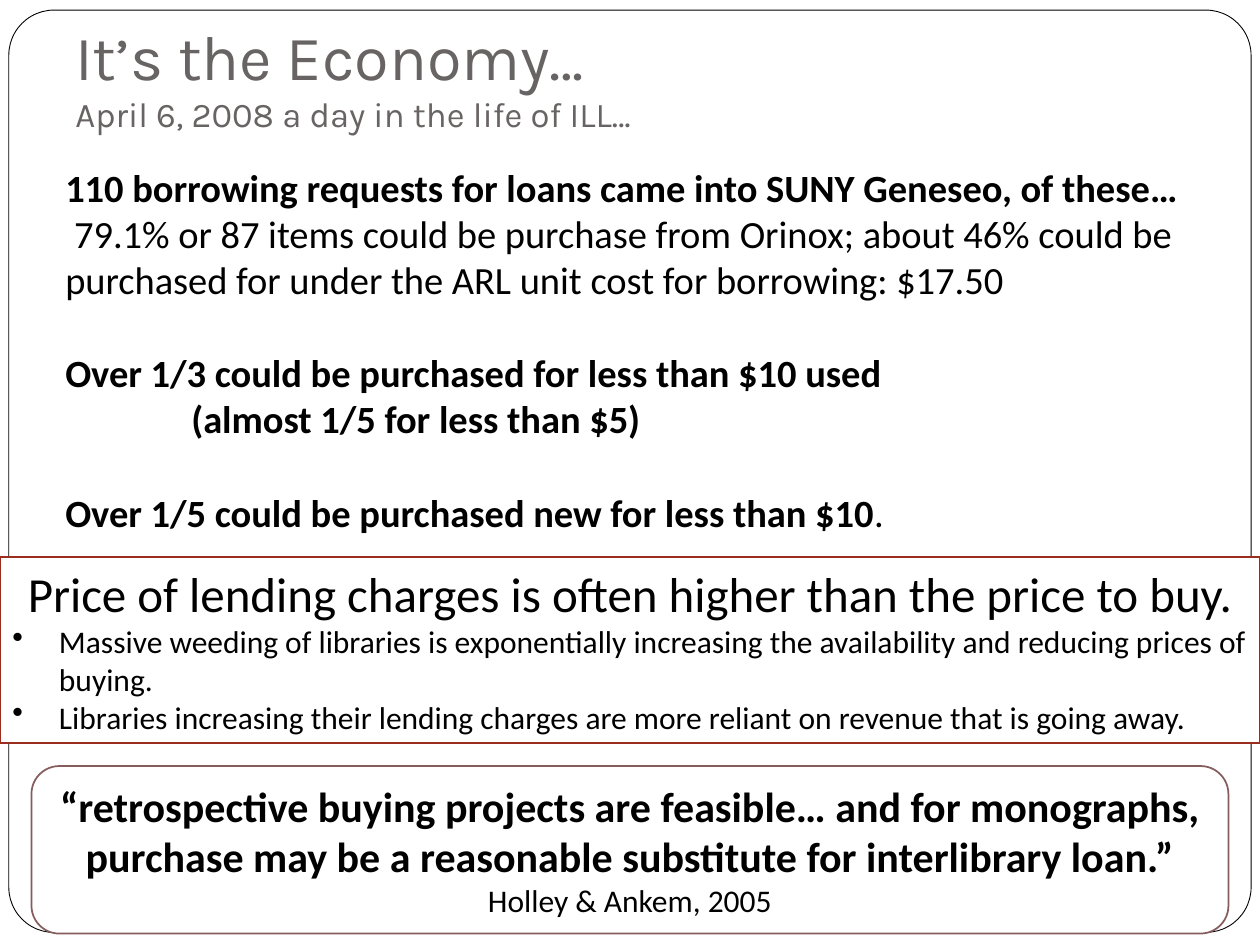
from dataclasses import dataclass, field
from typing import Optional

from lxml import etree
from pptx import Presentation
from pptx.dml.color import RGBColor
from pptx.enum import shapes, text
from pptx.oxml import ns
from pptx.util import Inches, Pt

BLACK = RGBColor(0x00, 0x00, 0x00)
WHITE = RGBColor(0xFF, 0xFF, 0xFF)
GRAY = RGBColor(0x69, 0x64, 0x64)
RUST = RGBColor(0x9B, 0x2D, 0x1F)
MAUVE = RGBColor(0x85, 0x5D, 0x5D)

BODY_SIZE = 22
BLANK_LINE = 26.85  # points, one line of body text
CENTER = text.PP_ALIGN.CENTER
LEFT = text.PP_ALIGN.LEFT


@dataclass
class Line:
    words: str
    size: float
    bold: bool = False
    align: text.PP_ALIGN = LEFT
    margin: float = 0
    indent: float = 0
    before: float = 0
    bullet: bool = False
    plain_end: str = ""


@dataclass
class Box:
    left: float
    top: float
    width: float
    height: float
    lines: list[Line] = field(default_factory=list)
    preset: Optional[shapes.MSO_SHAPE] = None
    outline: RGBColor = BLACK
    weight: float = 1
    rounding: Optional[float] = None
    anchor: text.MSO_ANCHOR = text.MSO_ANCHOR.TOP
    bottom_inset: float = 0.05
    font: str = "Calibri"
    color: RGBColor = BLACK


def write_line(para, line: Line, font: str, color: RGBColor) -> None:
    para.alignment = line.align
    para.space_before = Pt(line.before)
    para.font.name = font
    para.font.size = Pt(line.size)
    para.font.bold = line.bold
    para.font.color.rgb = color
    para.add_run().text = line.words
    if line.plain_end:
        span = para.add_run()
        span.text = line.plain_end
        span.font.bold = False
    props = para._p.get_or_add_pPr()
    props.set("marL", str(Inches(line.margin)))
    props.set("indent", str(Inches(line.indent)))
    if line.bullet:
        mark = etree.Element(ns.qn("a:buChar"), char="•")
        props.find(ns.qn("a:defRPr")).addprevious(mark)


def draw_box(page, box: Box) -> None:
    place = [Inches(n) for n in (box.left, box.top, box.width, box.height)]
    if box.preset is None:
        shape = page.shapes.add_textbox(*place)
    else:
        shape = page.shapes.add_shape(box.preset, *place)
        shape.shadow.inherit = False
        shape.fill.solid()
        shape.fill.fore_color.rgb = WHITE
        shape.line.color.rgb = box.outline
        shape.line.width = Pt(box.weight)
        if box.rounding is not None:
            shape.adjustments[0] = box.rounding
    frame = shape.text_frame
    frame.word_wrap = True
    frame.vertical_anchor = box.anchor
    frame.margin_bottom = Inches(box.bottom_inset)
    for number, line in enumerate(box.lines):
        para = frame.add_paragraph() if number else frame.paragraphs[0]
        write_line(para, line, box.font, box.color)


def bullet(words: str) -> Line:
    return Line(words, 18, margin=0.37, indent=-0.37, bullet=True)


BOXES = [
    Box(0.07, 0.08, 9.86, 7.32, preset=shapes.MSO_SHAPE.ROUNDED_RECTANGLE,
        weight=0.5, rounding=0.049),
    Box(0.5, 0.25, 9, 0.92, [
        Line("It’s the Economy…", 36),
        Line("April 6, 2008 a day in the life of ILL…", 19.8),
    ], anchor=text.MSO_ANCHOR.BOTTOM, bottom_inset=0.1, font="Karla", color=GRAY),
    Box(0.42, 1.25, 9.17, 3.45, [
        Line("110 borrowing requests for loans came into SUNY Geneseo, of these…",
             BODY_SIZE, bold=True),
        Line("79.1% or 87 items could be purchase from Orinox; about 46% could be "
             "purchased for under the ARL unit cost for borrowing: $17.50",
             BODY_SIZE, indent=0.07),
        Line("Over 1/3 could be purchased for less than $10 used",
             BODY_SIZE, bold=True, before=BLANK_LINE),
        Line("(almost 1/5 for less than $5)", BODY_SIZE, bold=True, margin=1),
        Line("Over 1/5 could be purchased new for less than $10",
             BODY_SIZE, bold=True, before=BLANK_LINE, plain_end="."),
    ]),
    Box(0, 4.42, 10, 1.48, [
        Line("Price of lending charges is often higher than the price to buy.",
             28, align=CENTER),
        bullet("Massive weeding of libraries is exponentially increasing the "
               "availability and reducing prices of buying."),
        bullet("Libraries increasing their lending charges are more reliant on "
               "revenue that is going away."),
    ], preset=shapes.MSO_SHAPE.RECTANGLE, outline=RUST),
    Box(0.25, 6.08, 9.5, 1.33, [
        Line("“retrospective buying projects are feasible… and for monographs, "
             "purchase may be a reasonable substitute for interlibrary loan.”",
             24, bold=True, align=CENTER),
        Line("Holley & Ankem, 2005", 18, align=CENTER),
    ], preset=shapes.MSO_SHAPE.ROUNDED_RECTANGLE, outline=MAUVE,
        anchor=text.MSO_ANCHOR.MIDDLE),
]


def main() -> None:
    deck = Presentation()
    deck.slide_width, deck.slide_height = Inches(10), Inches(7.5)
    page = deck.slides.add_slide(deck.slide_layouts[6])
    for box in BOXES:
        draw_box(page, box)
    deck.save("out.pptx")


if __name__ == "__main__":
    main()
